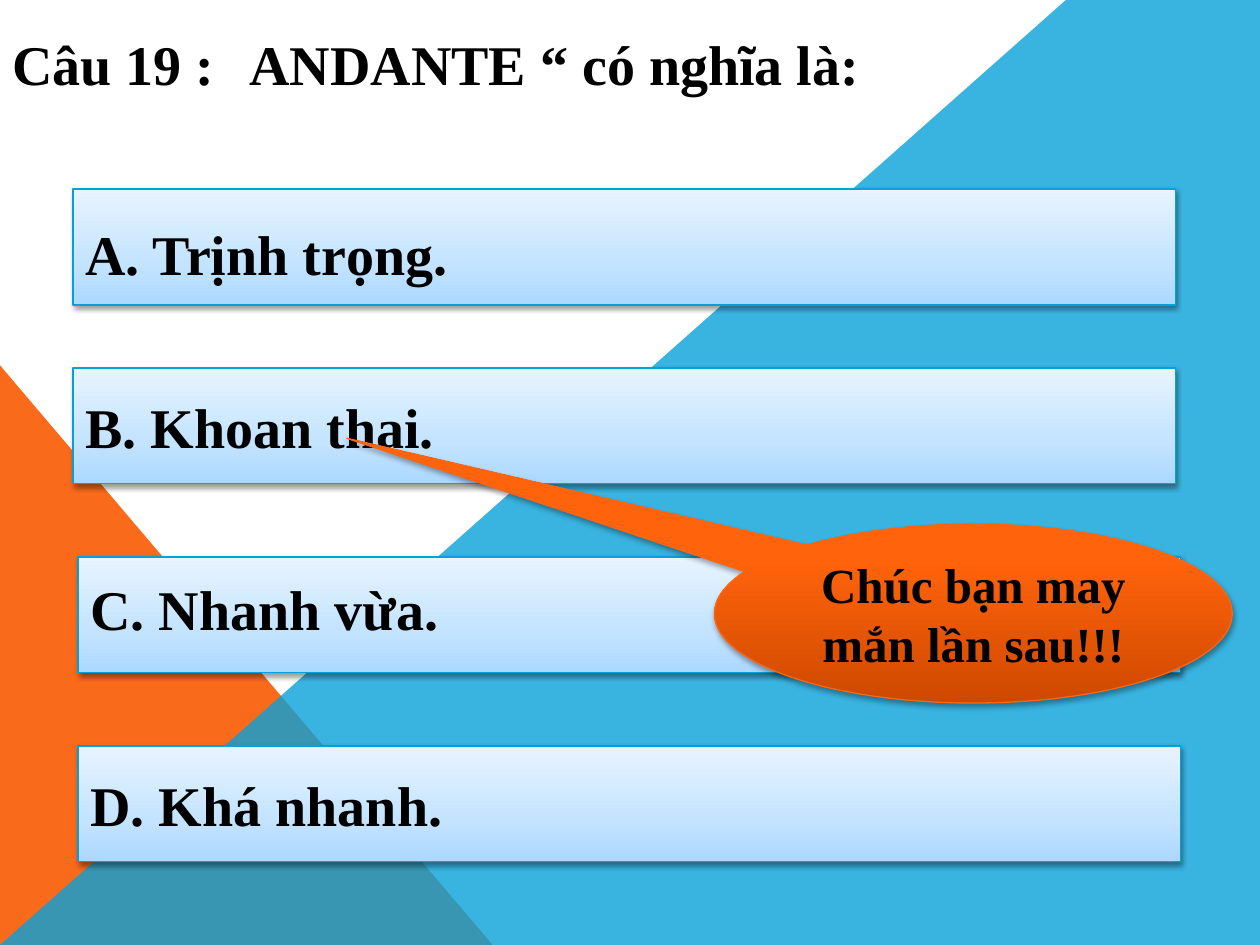
from lxml.etree import SubElement
from pptx import Presentation
from pptx.dml.color import RGBColor
from pptx.enum.shapes import MSO_SHAPE
from pptx.enum.text import MSO_ANCHOR, PP_ALIGN
from pptx.oxml.ns import qn
from pptx.util import Inches, Pt


def rgb(value):
    return RGBColor.from_string(value)


def add_xml(parent, tag, **attrs):
    return SubElement(parent, qn(tag), {k: str(v) for k, v in attrs.items()})


class QuizSlide:
    font = "Times New Roman"
    text_color = "000000"
    answer_stops = [(0, "ABD8FF"), (35, "C3E3FF"), (100, "E8F4FF")]
    callout_stops = [(0, "CE4900"), (80, "FF630C"), (100, "FF640E")]

    def __init__(self, prs):
        self.s = prs.slides.add_slide(prs.slide_layouts[6])

    def flat(self, sp, color, opacity=100):
        sp.shadow.inherit = False
        sp.fill.solid()
        sp.fill.fore_color.rgb = rgb(color)
        sp.line.fill.background()
        if opacity < 100:
            clr = sp._element.spPr.find(qn("a:solidFill"))[0]
            add_xml(clr, "a:alpha", val=opacity * 1000)

    def triangle(self, box, color):
        sp = self.s.shapes.add_shape(MSO_SHAPE.RIGHT_TRIANGLE, *map(Inches, box))
        self.flat(sp, color)

    def polygon(self, points, color, opacity):
        points = [(Inches(x), Inches(y)) for x, y in points]
        builder = self.s.shapes.build_freeform(*points[0])
        builder.add_line_segments(points[1:], close=True)
        self.flat(builder.convert_to_shape(), color, opacity)

    def raised(self, sp, stops, line, opacity, distance):
        sp.fill.gradient()
        sp.fill.gradient_angle = 90
        sp.line.color.rgb = rgb(line)
        sp.line.width = Pt(0.75)
        sp.shadow.inherit = False
        spPr = sp._element.spPr
        stop_list = spPr.find(qn("a:gradFill")).find(qn("a:gsLst"))
        stop_list.clear()
        for pos, color in stops:
            stop = add_xml(stop_list, "a:gs", pos=pos * 1000)
            add_xml(stop, "a:srgbClr", val=color)
        shadow = add_xml(spPr.find(qn("a:effectLst")), "a:outerShdw", blurRad=Pt(3.1),
                         dist=Pt(distance), dir=90 * 60000, rotWithShape=0)
        clr = add_xml(shadow, "a:srgbClr", val="000000")
        add_xml(clr, "a:alpha", val=opacity * 1000)

    def label(self, sp, text, size=32, align=PP_ALIGN.LEFT):
        tf = sp.text_frame
        tf.word_wrap = True
        tf.vertical_anchor = MSO_ANCHOR.MIDDLE
        p = tf.paragraphs[0]
        p.text = text
        p.alignment = align
        p.font.name = self.font
        p.font.size = Pt(size)
        p.font.bold = True
        p.font.color.rgb = rgb(self.text_color)
        return p

    def title(self, box, text, tab):
        sp = self.s.shapes.add_textbox(*map(Inches, box))
        p = self.label(sp, text)
        tabs = add_xml(p._p.get_or_add_pPr(), "a:tabLst")
        add_xml(tabs, "a:tab", pos=Inches(tab), algn="l")
        tabs.getparent().insert(0, tabs)

    def answer(self, left, top, text, inset_top, inset_bottom):
        sp = self.s.shapes.add_shape(MSO_SHAPE.RECTANGLE, Inches(left), Inches(top),
                                     Inches(8.75), Inches(0.92))
        self.raised(sp, self.answer_stops, "03A0D9", 38, 1.6)
        self.label(sp, text)
        sp.text_frame.margin_top = Inches(inset_top)
        sp.text_frame.margin_bottom = Inches(inset_bottom)

    def callout(self, box, tip, text):
        sp = self.s.shapes.add_shape(MSO_SHAPE.OVAL_CALLOUT, *map(Inches, box))
        sp.adjustments[0], sp.adjustments[1] = tip
        self.raised(sp, self.callout_stops, "F96615", 35, 1.8)
        self.label(sp, text, 28, PP_ALIGN.CENTER)


def main():
    prs = Presentation()
    prs.slide_width, prs.slide_height = Inches(10), Inches(7.5)
    quiz = QuizSlide(prs)
    quiz.triangle((0, 2.9, 3.91, 4.6), "F96A1B")
    quiz.polygon([(0, 7.5), (8.46, 0), (10, 0), (10, 7.5)], "08A1D9", 80)
    quiz.title((0, 0, 10, 1), "Câu 19 :\tANDANTE “ có nghĩa là:", 1.88)
    answers = [
        (0.58, 1.5, "A. Trịnh trọng.", 0.15, 0.05),
        (0.58, 2.92, "B. Khoan thai.", 0.05, 0.05),
        (0.62, 4.42, "C. Nhanh vừa.", 0.05, 0.15),
        (0.62, 5.92, "D. Khá nhanh.", 0.05, 0.05),
    ]
    for answer in answers:
        quiz.answer(*answer)
    quiz.callout((5.67, 4.16, 4.11, 1.42), (-1.21, -0.98), "Chúc bạn may mắn lần sau!!!")
    prs.save("out.pptx")


if __name__ == "__main__":
    main()
